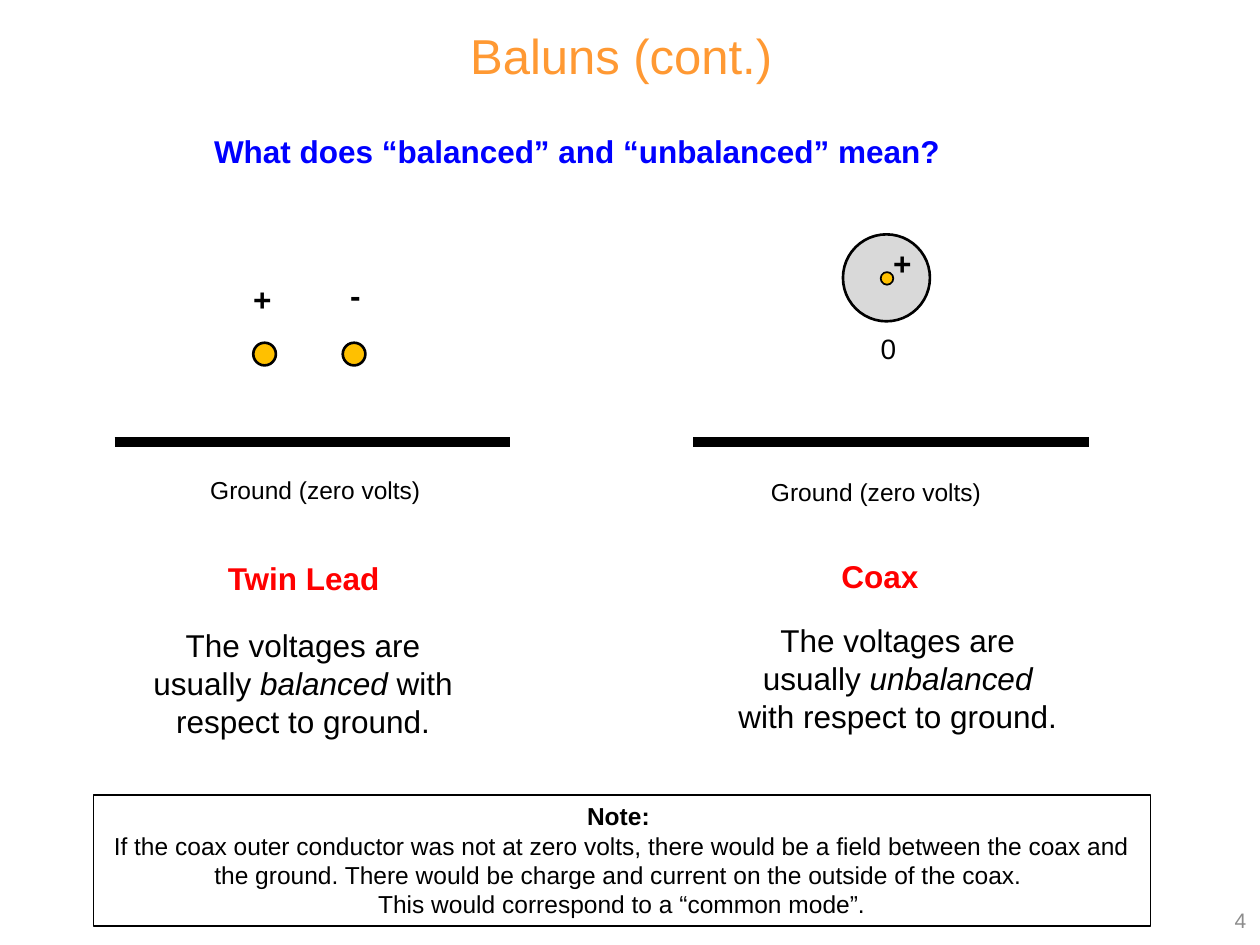
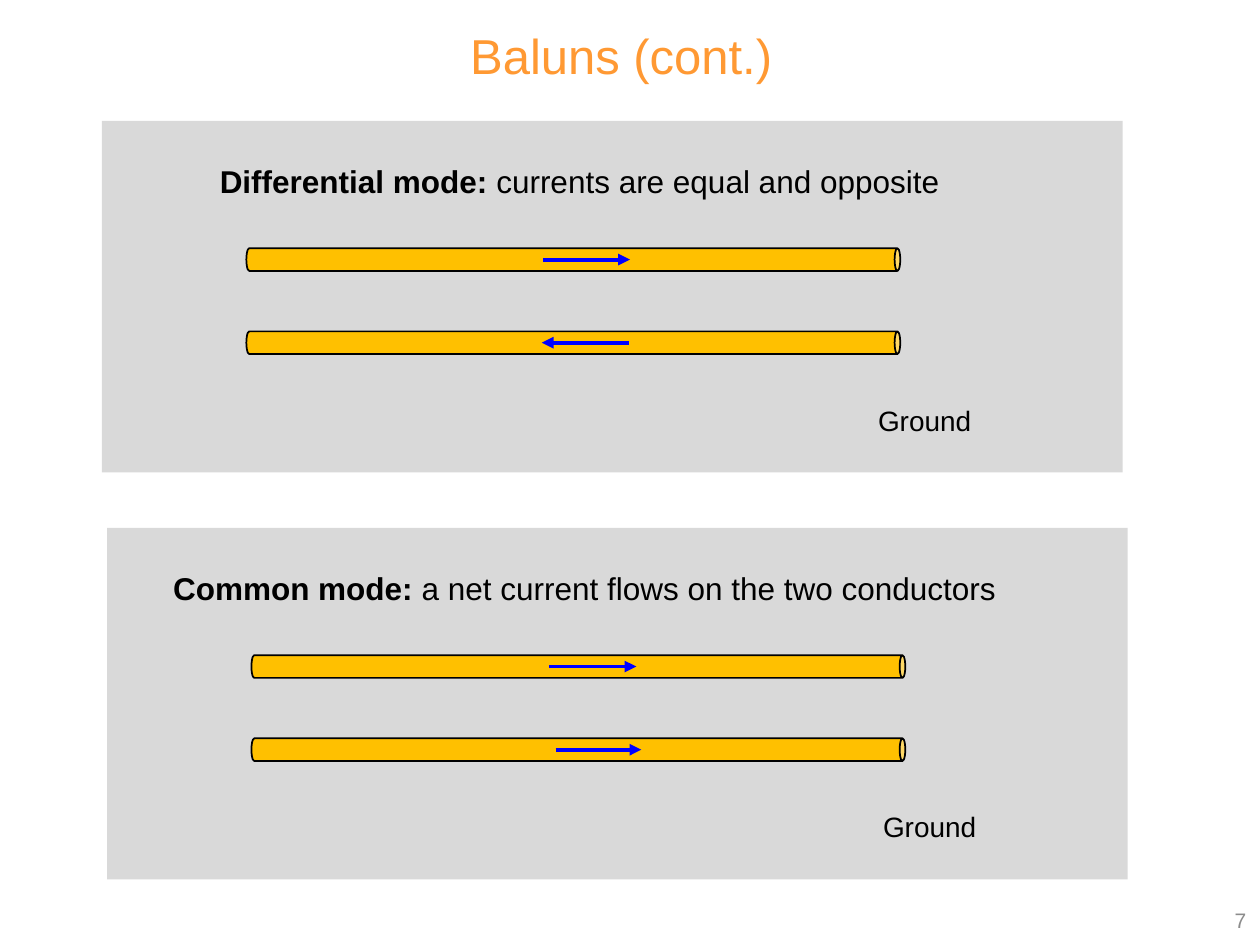
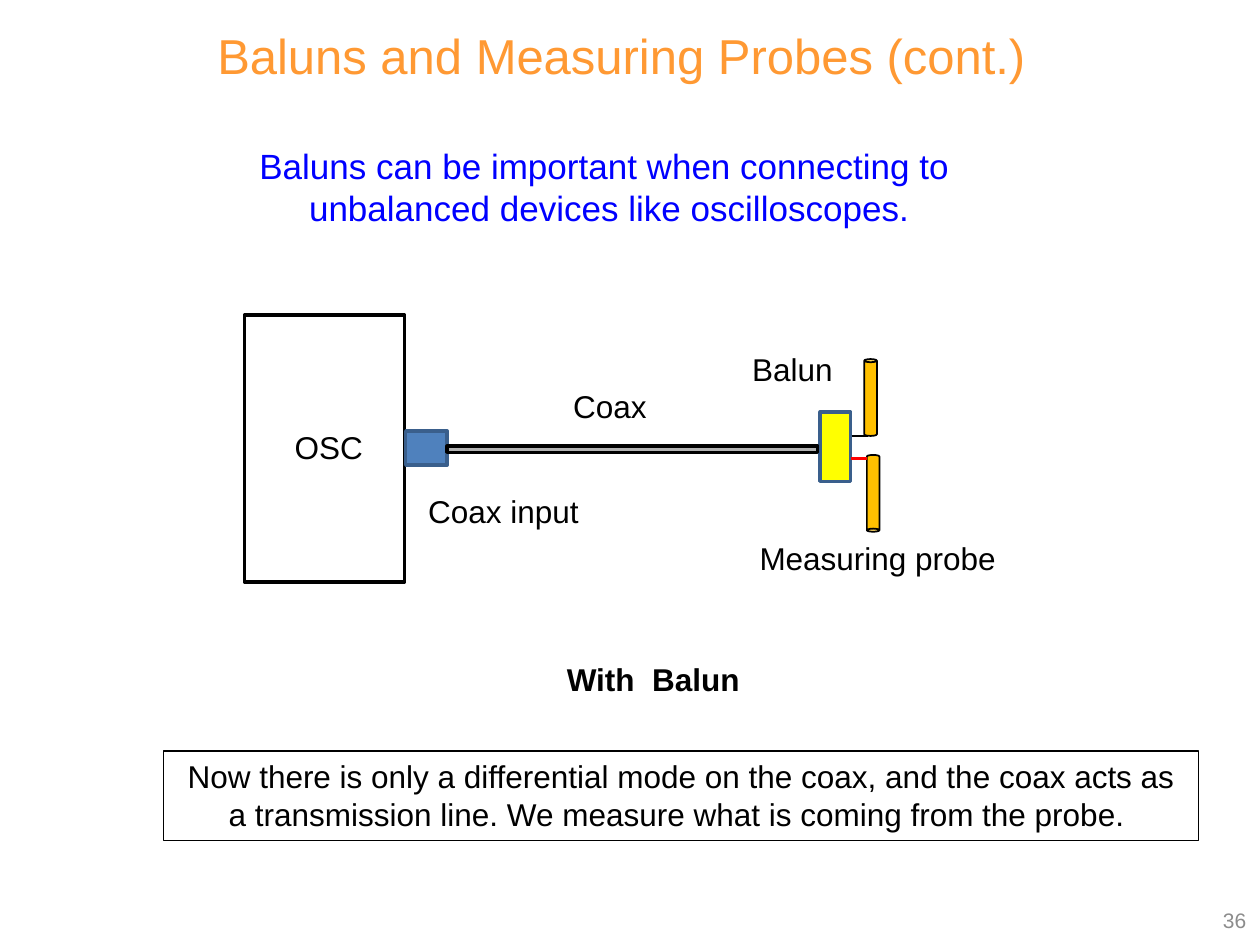
import pptx
import pptx.util
import pptx.dml.color
import pptx.enum.shapes
import pptx.enum.text
import pptx.oxml.ns
import pptx.oxml.xmlchemy

Inches, Pt = pptx.util.Inches, pptx.util.Pt
RGB = pptx.dml.color.RGBColor
KIND = pptx.enum.shapes.MSO_SHAPE
ALIGN = pptx.enum.text.PP_ALIGN
ANCHOR = pptx.enum.text.MSO_ANCHOR
FIT = pptx.enum.text.MSO_AUTO_SIZE

FONT = "Arial"
BLACK = RGB(0x00, 0x00, 0x00)
ORANGE = RGB(0xFF, 0x99, 0x33)
BLUE = RGB(0x00, 0x00, 0xFF)
RED = RGB(0xFF, 0x00, 0x00)
COPPER = RGB(0xFF, 0xC0, 0x00)
PALE = RGB(0xD9, 0xD9, 0xD9)
GREY = RGB(0xB2, 0xB2, 0xB2)
DIM = RGB(0x8C, 0x8C, 0x8C)
STEEL = RGB(0x4F, 0x81, 0xBD)
NAVY = RGB(0x3A, 0x5F, 0x8C)
YELLOW = RGB(0xFF, 0xFF, 0x00)

# Paragraphs are strings, or lists of (text, style) with "b" bold, "i" italic.
LEADS = [
    dict(name="Twin Lead", spot=(1.71, 4.39, 1.42, 0.4), ground=0.91,
         label=(1.57, 3.72, 1.88, 0.34), mode="balanced",
         about=(1, 4.92, 2.81, 1.01),
         rounds=[(2.01, 2.72, 0.18, COPPER, 1.5), (2.72, 2.72, 0.18, COPPER, 1.5)],
         signs=[("+", (1.91, 2.17, 0.35, 0.4), 18, True),
                ("-", (2.68, 2.14, 0.29, 0.4), 18, True)]),
    dict(name="Coax", spot=(6.58, 4.37, 0.82, 0.4), ground=5.5,
         label=(6.02, 3.74, 1.88, 0.34), mode="unbalanced",
         about=(5.72, 4.88, 2.81, 1.01),
         rounds=[(6.69, 1.86, 0.69, PALE, 1.5), (6.99, 2.16, 0.1, COPPER, 1)],
         signs=[("+", (6.99, 1.89, 0.35, 0.4), 18, True),
                ("0", (6.89, 2.58, 0.33, 0.37), 16, False)]),
]
NOTE = [
    [("Note: ", "b")],
    "If the coax outer conductor was not at zero volts, there would be a field "
    "between the coax and the ground. There would be charge and current on the "
    "outside of the coax. ",
    "This would correspond to a “common mode”.",
]

# Arrow ends are measured from the left edge of the panel.
MODES = [
    dict(left=0.81, top=0.96, name="Differential mode: ",
         about="currents are equal and opposite", width=5.97,
         arrows=[(3.5, 4.19), (4.18, 3.49)]),
    dict(left=0.85, top=4.19, name="Common mode: ",
         about="a net current flows on the two conductors", width=6.86,
         arrows=[(3.51, 4.2), (3.56, 4.24)]),
]

PARTS = [
    ((1.94, 2.5, 1.27, 2.12), None, BLACK),
    ((3.22, 3.42, 0.33, 0.27), STEEL, NAVY),
    ((6.51, 3.27, 0.24, 0.55), YELLOW, NAVY),
    ((3.55, 3.54, 2.94, 0.05), GREY, BLACK),
]
PROBES = [((6.86, 2.85, 0.1, 0.61), 0), ((6.88, 3.61, 0.1, 0.61), 180)]
WIRES = [((6.75, 3.64), (6.88, 3.64), RED), ((6.76, 3.46), (6.89, 3.46), BLACK)]
NAMES = [
    ("OSC", (2.24, 3.35, 0.75, 0.4)),
    ("Coax input", (3.3, 3.86, 1.41, 0.4)),
    ("Measuring probe", (5.93, 4.23, 2.1, 0.4)),
    ("Coax", (4.45, 3.02, 0.79, 0.4)),
    ("Balun", (5.87, 2.73, 0.85, 0.4)),
]
ADVICE = ["Baluns can be important when connecting to ",
          "unbalanced devices like oscilloscopes."]
RESULT = ("Now there is only a differential mode on the coax, and the coax acts as "
          "a transmission line. We measure what is coming from the probe. ")


def write(frame, paras, size, color=BLACK, bold=False, align=ALIGN.LEFT):
    for num, para in enumerate(paras):
        line = frame.add_paragraph() if num else frame.paragraphs[0]
        line.alignment = align
        for text, style in [(para, "")] if isinstance(para, str) else para:
            run = line.add_run()
            run.text = text
            font = run.font
            font.name, font.size, font.color.rgb = FONT, Pt(size), color
            font.bold, font.italic = bold or style == "b", style == "i"


def label(shapes, at, paras, size=18, color=BLACK, bold=False,
          align=ALIGN.LEFT, wrap=False):
    frame = shapes.add_textbox(*map(Inches, at)).text_frame
    frame.word_wrap = wrap
    frame.auto_size = FIT.SHAPE_TO_FIT_TEXT
    write(frame, paras, size, color, bold, align)
    return frame


def draw(shapes, kind, at, fill=None, edge=None, weight=1.0, turn=0):
    shape = shapes.add_shape(kind, *map(Inches, at))
    shape.shadow.inherit = False
    shape.rotation = turn
    for paint, color in ((shape.fill, fill), (shape.line.fill, edge)):
        if color is None:
            paint.background()
        else:
            paint.solid()
            paint.fore_color.rgb = color
    if edge is not None:
        shape.line.width = Pt(weight)
    return shape


def boxed(shapes, at, paras, size):
    frame = draw(shapes, KIND.RECTANGLE, at, edge=BLACK, weight=0.75).text_frame
    frame.word_wrap = True
    frame.vertical_anchor = ANCHOR.TOP
    write(frame, paras, size, align=ALIGN.CENTER)


def link(shapes, start, end, color, weight, arrow=False):
    line = shapes.add_connector(pptx.enum.shapes.MSO_CONNECTOR.STRAIGHT,
                                *map(Inches, start + end))
    line.line.color.rgb = color
    line.line.width = Pt(weight)
    make = pptx.oxml.xmlchemy.OxmlElement
    props = line.element.spPr
    if arrow:
        head = make("a:tailEnd")
        head.set("type", "triangle")
        props.find(pptx.oxml.ns.qn("a:ln")).append(head)
    props.append(make("a:effectLst"))


def start(deck, text, page):
    """Add a slide with its title and page number; return its shapes."""
    shapes = deck.slides.add_slide(deck.slide_layouts[5]).shapes
    title = shapes.title
    title.left, title.top, title.width, title.height = map(
        Inches, (0.35, 0.15, 9.16, 0.57))
    title.text_frame.auto_size = FIT.NONE
    title.text_frame.vertical_anchor = ANCHOR.TOP
    write(title.text_frame, [text], 28, ORANGE, align=ALIGN.CENTER)
    frame = label(shapes, (7.66, 7.1, 2.33, 0.4), [page], 12, DIM,
                  align=ALIGN.RIGHT, wrap=True)
    frame.auto_size = FIT.NONE
    frame.vertical_anchor = ANCHOR.MIDDLE
    return shapes


def leads(deck):
    shapes = start(deck, "Baluns (cont.)", "4")
    for lead in LEADS:
        group = shapes.add_group_shape().shapes
        left = lead["ground"]
        link(group, (left, 3.51), (left + 3.14, 3.51), BLACK, 6)
        for x, y, size, fill, weight in lead["rounds"]:
            draw(group, KIND.OVAL, (x, y, size, size), fill, BLACK, weight)
        label(group, lead["label"], ["Ground (zero volts)"], 14)
        for text, at, size, bold in lead["signs"]:
            label(group, at, [text], size, bold=bold)
        label(shapes, lead["about"],
              [[("The voltages are usually ", ""), (lead["mode"], "i"),
                (" with respect to ground.", "")]],
              align=ALIGN.CENTER, wrap=True)
        label(shapes, lead["spot"], [lead["name"]], color=RED, bold=True)
    label(shapes, (1.6, 1, 5.99, 0.4),
          ["What does “balanced” and “unbalanced” mean?"], color=BLUE, bold=True)
    boxed(shapes, (0.74, 6.31, 8.39, 1.04), NOTE, 14)


def modes(deck):
    shapes = start(deck, "Baluns (cont.)", "7")
    long, thick = 5.19, 0.18
    for mode in MODES:
        group = shapes.add_group_shape().shapes
        left, top, width = mode["left"], mode["top"], mode["width"]
        draw(group, KIND.RECTANGLE, (left, top, 8.1, 2.79), PALE)
        for row, (tail, tip) in enumerate(mode["arrows"]):
            y = top + 1.1 + 0.66 * row
            draw(group, KIND.CAN,
                 (left + 3.74 - thick / 2, y - long / 2, thick, long),
                 COPPER, BLACK, turn=90)
            link(group, (left + tail, y), (left + tip, y), BLUE, 2.25, True)
        label(group, (left + 6.06, top + 2.19, 0.95, 0.37), ["Ground"], 16)
        label(group, (left + 3.79 - width / 2, top + 0.28, width, 0.4),
              [[(mode["name"], "b"), (mode["about"], "")]], align=ALIGN.CENTER)


def probe(deck):
    shapes = start(deck, "Baluns and Measuring Probes (cont.)", "36")
    label(shapes, (1.94, 1.1, 5.79, 0.77), ADVICE, 20, BLUE, align=ALIGN.CENTER)
    label(shapes, (4.4, 5.19, 1.59, 0.4), ["With  Balun"], bold=True)
    boxed(shapes, (1.3, 5.96, 8.21, 0.71), [RESULT], 18)
    group = shapes.add_group_shape().shapes
    for at, fill, edge in PARTS:
        draw(group, KIND.RECTANGLE, at, fill, edge, 2)
    for at, turn in PROBES:
        draw(group, KIND.CAN, at, COPPER, BLACK, turn=turn)
    for text, at in NAMES:
        label(group, at, [text])
    for tail, tip, color in WIRES:
        link(group, tail, tip, color, 1.5)


def main():
    deck = pptx.Presentation()
    deck.slide_width, deck.slide_height = Inches(10), Inches(7.5)
    leads(deck)
    modes(deck)
    probe(deck)
    deck.save("out.pptx")


if __name__ == "__main__":
    main()
